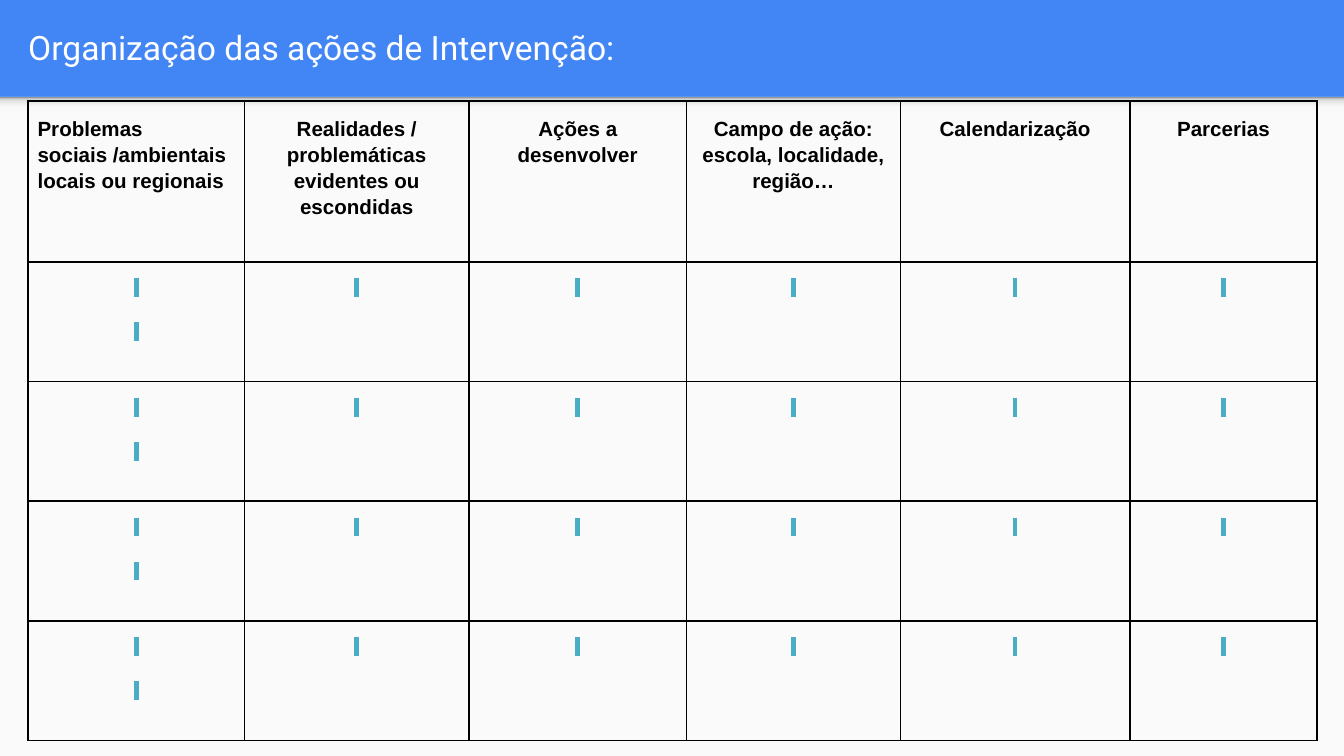
from lxml.etree import SubElement
from pptx import Presentation
from pptx.dml.color import RGBColor
from pptx.enum.shapes import MSO_SHAPE
from pptx.enum.text import MSO_ANCHOR, MSO_AUTO_SIZE, PP_ALIGN
from pptx.oxml.ns import qn
from pptx.util import Inches, Pt

BLUE = RGBColor(0x42, 0x85, 0xF4)
PAPER = RGBColor(0xFA, 0xFA, 0xFA)
WHITE = RGBColor(0xFF, 0xFF, 0xFF)
BLACK = RGBColor(0x00, 0x00, 0x00)
TEAL = RGBColor(0x4B, 0xAC, 0xC6)
SHADE_STOPS = [
    (0, RGBColor(0xF9, 0xF9, 0xF9)),
    (36, RGBColor(0xF9, 0xF9, 0xF9)),
    (80, RGBColor(0xDE, 0xDE, 0xDE)),
    (100, RGBColor(0x99, 0x99, 0x99)),
]

HEADINGS = [
    "Problemas sociais /ambientais locais ou regionais",
    "Realidades / problemáticas evidentes ou escondidas",
    "Ações a desenvolver",
    "Campo de ação: escola, localidade, região…",
    "Calendarização",
    "Parcerias",
]
COLUMN_WIDTHS = [1.61, 1.67, 1.62, 1.59, 1.71, 1.39]
ROW_HEIGHTS = [1.2] + 4 * [0.89]
BAND_HEIGHT = Inches(0.72)
MARK = " "  # a no-break space, shown by its highlight


def add_band(top, height):
    band = slide.shapes.add_shape(MSO_SHAPE.RECTANGLE, 0, top, prs.slide_width, height)
    band.shadow.inherit = False
    band.line.fill.background()
    return band


def add_run(paragraph, text, size, color, font_name, bold=False, highlight=None):
    run = paragraph.add_run()
    run.text = text
    run.font.size = Pt(size)
    run.font.bold = bold
    run.font.color.rgb = color
    if highlight is not None:
        marker = SubElement(run.font._element, qn("a:highlight"))
        SubElement(marker, qn("a:srgbClr"), val=str(highlight))
    run.font.name = font_name


prs = Presentation()
prs.slide_width = Inches(10)
prs.slide_height = prs.slide_width * 9 // 16
slide = prs.slides.add_slide(prs.slide_layouts[5])
slide.background.fill.solid()
slide.background.fill.fore_color.rgb = BLUE

# Light page under the blue title band, with a soft shade along its top edge
page = add_band(BAND_HEIGHT, prs.slide_height - BAND_HEIGHT)
page.fill.solid()
page.fill.fore_color.rgb = PAPER

shade = add_band(BAND_HEIGHT, Inches(0.12))
shade.fill.gradient()
shade.fill.gradient_angle = 90
stops = shade._element.spPr.find(".//" + qn("a:gsLst"))
stops.clear()
for percent, color in SHADE_STOPS:
    stop = SubElement(stops, qn("a:gs"), pos=str(percent * 1000))
    SubElement(stop, qn("a:srgbClr"), val=str(color))

# Title
title = slide.shapes.title
title.left, title.top = Inches(0.11), Inches(0.02)
title.width, title.height = Inches(9.65), Inches(0.66)
frame = title.text_frame
frame.auto_size = MSO_AUTO_SIZE.NONE
frame.vertical_anchor = MSO_ANCHOR.MIDDLE
frame.margin_left = frame.margin_right = Inches(0.1)
frame.margin_top = frame.margin_bottom = Inches(0.1)
frame.paragraphs[0].alignment = PP_ALIGN.LEFT
add_run(frame.paragraphs[0], "Organização das ações de Intervenção:", 18, WHITE, "Roboto")

# Planning grid
grid = slide.shapes.add_table(
    len(ROW_HEIGHTS), len(COLUMN_WIDTHS), Inches(0.21), Inches(0.75),
    Inches(sum(COLUMN_WIDTHS)), Inches(sum(ROW_HEIGHTS)),
).table
grid.first_row = grid.horz_banding = False
for column, width in zip(grid.columns, COLUMN_WIDTHS):
    column.width = Inches(width)
for row, height in zip(grid.rows, ROW_HEIGHTS):
    row.height = Inches(height)

for r, row in enumerate(grid.rows):
    for c, cell in enumerate(row.cells):
        cell.margin_left = cell.margin_right = Inches(0.07)
        cell.margin_top = cell.margin_bottom = Inches(0.1)
        cell.vertical_anchor = MSO_ANCHOR.TOP
        properties = cell._tc.get_or_add_tcPr()
        for side in ("lnL", "lnR", "lnT", "lnB"):
            border = SubElement(properties, qn(f"a:{side}"), w=str(Pt(1)))
            fill = SubElement(border, qn("a:solidFill"))
            SubElement(fill, qn("a:srgbClr"), val=str(BLACK))
        cell.fill.background()

        text = cell.text_frame
        if r > 0 and c == 0:
            text.add_paragraph().space_before = Pt(12)
        for paragraph in text.paragraphs:
            paragraph.line_spacing = 1.15
            paragraph.alignment = PP_ALIGN.CENTER
            if r == 0:
                add_run(paragraph, HEADINGS[c], 11, BLACK, "Arial", bold=True)
            else:
                add_run(paragraph, MARK, 9, BLACK, "Arial", highlight=TEAL)
grid.cell(0, 0).text_frame.paragraphs[0].alignment = PP_ALIGN.LEFT

prs.save("out.pptx")
